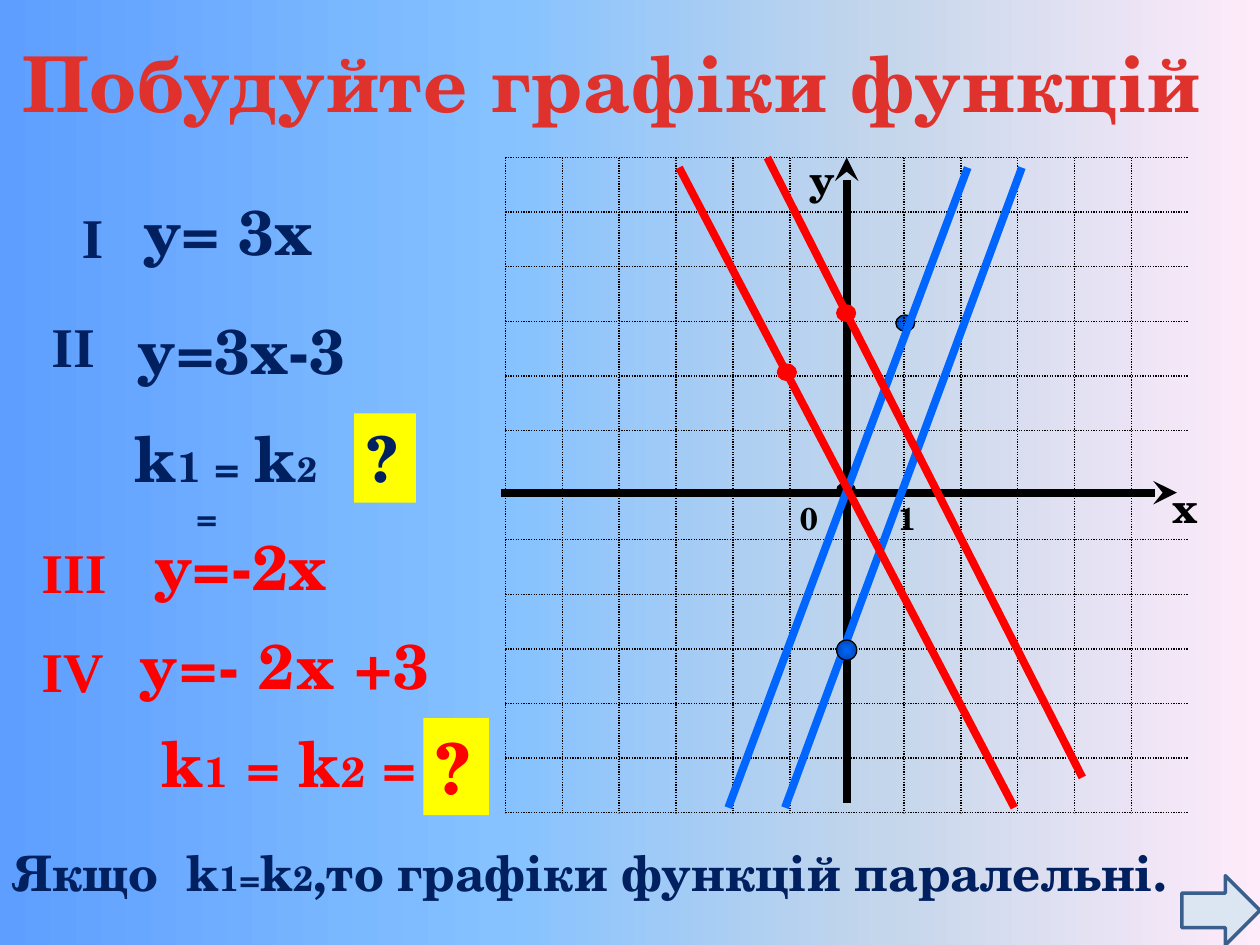
import pptx
import pptx.dml.color
import pptx.enum.dml
import pptx.enum.shapes
import pptx.enum.text
import pptx.oxml
import pptx.oxml.ns
import pptx.util
from lxml import etree

Inches, Pt = pptx.util.Inches, pptx.util.Pt
SHAPE = pptx.enum.shapes.MSO_SHAPE
DASH = pptx.enum.dml.MSO_LINE
CENTER = pptx.enum.text.PP_ALIGN.CENTER
qn = pptx.oxml.ns.qn

SERIF, ROMAN = "TeX Gyre Schola", "Times New Roman"
NAVY, RED, BLUE, BLACK, YELLOW = "002060", "FF0000", "0066FF", "000000", "FFFF00"


def rgb(color):
    return pptx.dml.color.RGBColor.from_string(color)


def set_stops(element, stops):
    gs_list = element.find(".//" + qn("a:gsLst"))
    for old in list(gs_list):
        gs_list.remove(old)
    for percent, color in stops:
        gs = etree.SubElement(gs_list, qn("a:gs"), pos=str(percent * 1000))
        etree.SubElement(gs, qn("a:srgbClr"), val=color)


def add_text(s, left, top, width, height, runs, size, color, font=SERIF,
             align=None, wrap=False, spacing=0, indent=0, fill=None):
    sp = s.shapes.add_textbox(Inches(left), Inches(top), Inches(width), Inches(height))
    if fill:
        sp.fill.solid()
        sp.fill.fore_color.rgb = rgb(fill)
    tf = sp.text_frame
    tf.word_wrap = wrap
    tf.auto_size = pptx.enum.text.MSO_AUTO_SIZE.SHAPE_TO_FIT_TEXT
    p = tf.paragraphs[0]
    p.alignment = align
    p.font.name = font
    p.font.size = Pt(size)
    p.font.bold = True
    p.font.color.rgb = rgb(color)
    if indent:
        p._p.get_or_add_pPr().set("indent", str(Inches(indent)))
    for text, run_size in runs if isinstance(runs, list) else [(runs, size)]:
        r = p.add_run()
        r.text = text
        if run_size != size:
            r.font.size = Pt(run_size)
        if spacing:
            r._r.get_or_add_rPr().set("spc", str(int(spacing * 100)))


def add_line(s, x1, y1, x2, y2, color, width, dash=None, arrow=False):
    line = s.shapes.add_connector(
        pptx.enum.shapes.MSO_CONNECTOR.STRAIGHT,
        Inches(x1), Inches(y1), Inches(x2), Inches(y2))
    line.line.color.rgb = rgb(color)
    line.line.width = Pt(width)
    if dash:
        line.line.dash_style = dash
    if arrow:
        etree.SubElement(line.line._get_or_add_ln(), qn("a:tailEnd"), type="stealth")
    etree.SubElement(line._element.spPr, qn("a:effectLst"))


def add_shape(s, kind, left, top, width, height, fill, line, line_width):
    sp = s.shapes.add_shape(kind, Inches(left), Inches(top), Inches(width), Inches(height))
    sp.shadow.inherit = False
    sp.fill.solid()
    sp.fill.fore_color.rgb = rgb(fill)
    sp.line.color.rgb = rgb(line)
    sp.line.width = Pt(line_width)
    return sp


def add_point(s, left, top, fill, line=BLACK, width=0.15, height=0.13, shaded=False):
    sp = add_shape(s, SHAPE.FLOWCHART_CONNECTOR, left, top, width, height, fill, line, 0.75)
    if shaded:
        sp.fill.gradient()
        set_stops(sp.element, [(0, fill), (100, "0049B6")])
        lin = sp.element.find(".//" + qn("a:lin"))
        radial = etree.Element(qn("a:path"), attrib={"path": "shape"})
        etree.SubElement(radial, qn("a:fillToRect"), l="50000", t="50000", r="50000", b="50000")
        lin.getparent().replace(lin, radial)


def add_background(s):
    fill = s.background.fill
    fill.gradient()
    fill.gradient_angle = 0
    set_stops(s.element, [(0, "5E9EFF"), (40, "85C2FF"), (70, "C4D6EB"), (100, "FFEBFA")])


def add_grid(s, left, top, width, height):
    step_x, step_y, axis = 0.452, height / 12, 6
    for i in range(12):
        if i != axis:
            x = left + i * step_x
            add_line(s, x, top, x, top + height, BLACK, 0.75, DASH.ROUND_DOT)
    for i in range(13):
        if i != axis:
            y = top + i * step_y
            add_line(s, left, y, left + width, y, BLACK, 0.75, DASH.ROUND_DOT)


def add_plot(s, left, top, width, height):
    origin_x, origin_y = left + 2.71, top + 2.66
    add_point(s, origin_x + 0.39, origin_y - 1.41, BLUE, shaded=True)
    add_line(s, origin_x, top + 5.12, origin_x, top, BLACK, 4.5, arrow=True)
    add_grid(s, left, top, width, height)
    add_text(s, left + 5.2, top + 2.52, 0.4, 0.51, "х", 24, BLACK)
    add_text(s, left + 2.32, top - 0.08, 0.39, 0.5, "у", 24, BLACK, wrap=True)
    add_line(s, left - 0.03, origin_y, left + 5.33, origin_y, BLACK, 4.5, arrow=True)
    add_point(s, origin_x - 0.08, origin_y - 0.08, BLACK)
    graphs = [
        (-0.94, 2.5, 0.96, -2.58, BLUE),
        (-0.49, 2.5, 1.39, -2.58, BLUE),
        (1.87, 2.26, -0.63, -2.66, RED),
        (1.33, 2.5, -1.33, -2.58, RED),
    ]
    for x1, y1, x2, y2, color in graphs:
        add_line(s, origin_x + x1, origin_y + y1, origin_x + x2, origin_y + y2, color, 4.5)
    add_point(s, origin_x - 0.08, origin_y + 1.17, BLUE, width=0.16, height=0.16, shaded=True)
    for x, y in [(-0.08, -1.49), (-0.55, -1.02)]:
        add_point(s, origin_x + x, origin_y + y, RED, RED)
    for text, x, width in [("1", 0.31, 0.33), ("0", -0.47, 0.38)]:
        add_text(s, origin_x + x, origin_y, width, 0.4, text, 18, BLACK)


def add_formulas(s, left, top):
    formulas = [
        ("у= 3х", 0.79, 0, 1.58, NAVY, 0),
        ("у=3х-3", 0.71, 0.94, 1.96, NAVY, 0),
        ("у=-2х", 0.86, 2.66, 1.64, RED, 0),
        ("у=- 2х +3", 0.71, 3.44, 2.64, RED, 0.5),
    ]
    for text, x, y, width, color, spacing in formulas:
        add_text(s, left + x, top + y, width, 0.71, text, 36, color,
                 align=CENTER, spacing=spacing)
    numerals = [
        ("I", 0.32, 0.08, 0.38, NAVY),
        ("II", 0.08, 0.94, 0.7, NAVY),
        ("III", 0, 2.74, 0.73, RED),
        ("IV", 0, 3.52, 0.7, RED),
    ]
    for text, x, y, width, color in numerals:
        add_text(s, left + x, top + y, width, 0.64, text, 32, color, font=ROMAN)
    add_text(s, left + 0.32, top + 1.8, 2.19, 0.71,
             [("k", 36), ("1 = ", 24), ("k", 36), ("2 =", 20)], 36, NAVY,
             align=CENTER, wrap=True, spacing=0.5, indent=0.3)
    add_text(s, left + 0.94, top + 4.22, 2.25, 0.71,
             [("k", 36), ("1", 24), (" = ", 32), ("k", 36), ("2", 24), (" =", 32)], 36, RED,
             align=CENTER, spacing=0.5)
    questions = [(2.58, 1.8, 0.49, 0.71, 36, NAVY), (3.13, 4.22, 0.52, 0.77, 40, RED)]
    for x, y, width, height, size, color in questions:
        add_text(s, left + x, top + y, width, height, "?", size, color,
                 spacing=0.5, fill=YELLOW)


def add_conclusion(s, left, top, width, height):
    runs = [("Якщо  k", 28), ("1=", 20), ("k", 28), ("2", 20),
            (",то графіки функцій паралельні.", 28)]
    add_text(s, left, top, width, height, runs, 28, NAVY, wrap=True)
    add_shape(s, SHAPE.RIGHT_ARROW, left + 9.38, top + 0.31, 0.62, 0.55, "DCE6F2", "3A5F8C", 2)


def main():
    prs = pptx.Presentation()
    prs.slide_width, prs.slide_height = Inches(10), Inches(7.5)
    s = prs.slides.add_slide(prs.slide_layouts[6])
    add_background(s)
    add_plot(s, 4.01, 1.25, 5.42, 5.2)
    add_text(s, 0, 0.23, 9.72, 0.84, "Побудуйте графіки функцій", 44, "E0322D",
             align=CENTER, spacing=0.5)
    add_formulas(s, 0.23, 1.48)
    add_conclusion(s, 0, 6.64, 9.69, 0.57)
    prs.save("out.pptx")


if __name__ == "__main__":
    main()
